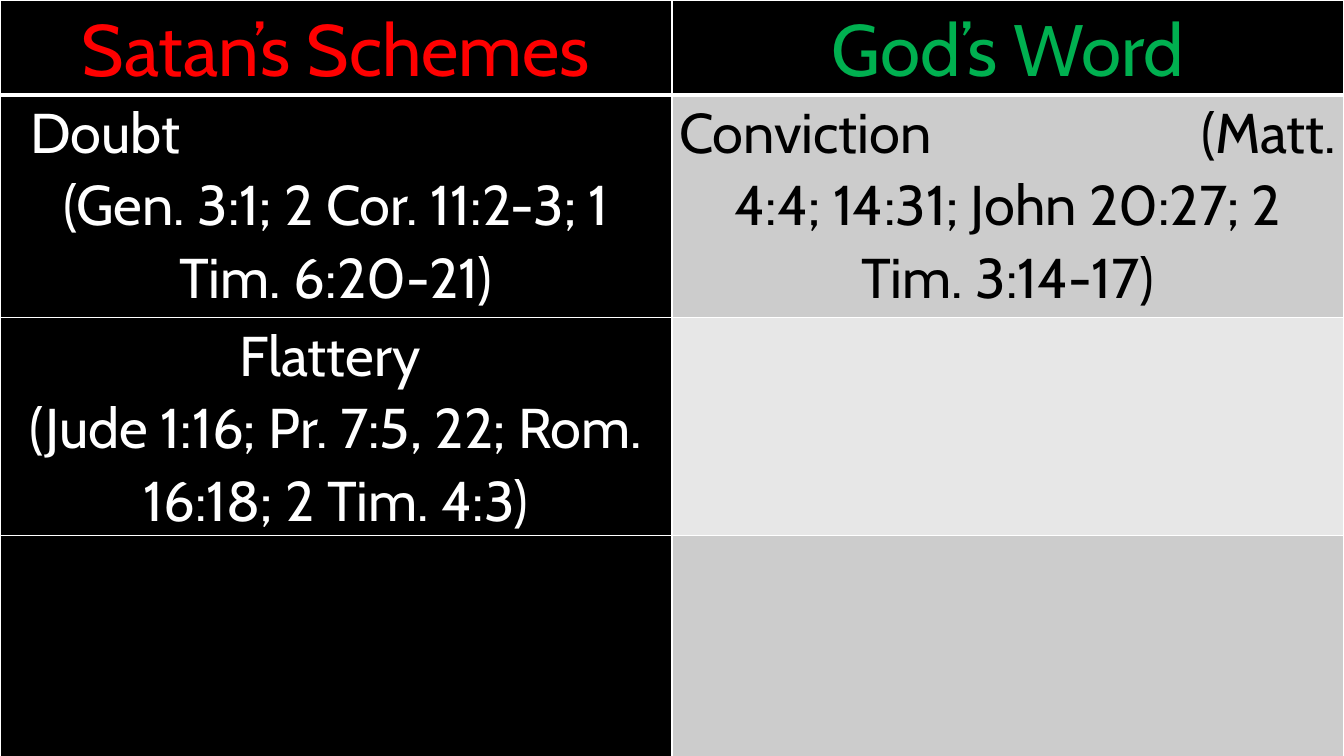
from lxml.etree import SubElement
from pptx import Presentation
from pptx.dml.color import RGBColor
from pptx.enum.text import PP_ALIGN
from pptx.oxml import parse_xml
from pptx.oxml.ns import nsdecls, qn
from pptx.util import Inches, Pt

BLACK, WHITE, RED, GREEN = "000000", "FFFFFF", "FF0000", "00B050"
DARK_GRAY, LIGHT_GRAY = "CCCCCC", "E7E7E7"
COLUMN_WIDTH = 13.33 / 2
ROW_HEIGHTS = [0.94, 2.21, 2.15, 2.2]
CELL_MARGIN = 0.07


def color(hex_value):
    return RGBColor.from_string(hex_value)


def set_borders(cell, top, bottom):
    properties = cell._tc.get_or_add_tcPr()
    sides = [("lnL", 1), ("lnR", 1), ("lnT", top), ("lnB", bottom)]
    for index, (side, points) in enumerate(sides):
        line = parse_xml(
            f'<a:{side} {nsdecls("a")} w="{Pt(points)}"><a:solidFill>'
            f'<a:srgbClr val="{WHITE}"/></a:solidFill></a:{side}>')
        properties.insert(index, line)


def style_cell(cell, fill, row):
    cell.fill.solid()
    cell.fill.fore_color.rgb = color(fill)
    cell.margin_left = cell.margin_right = Inches(CELL_MARGIN)
    cell.margin_top = cell.margin_bottom = 0
    set_borders(cell, 3 if row == 1 else 1, 3 if row == 0 else 1)


def write_cell(cell, lines, size, text_color):
    cell.text_frame.text = "\n".join(lines)
    for paragraph in cell.text_frame.paragraphs:
        paragraph.alignment = PP_ALIGN.CENTER
        paragraph.line_spacing = 1.07
        for run in paragraph.runs:
            run.font.name = "Cabin"
            run.font.size = Pt(size)
            run.font.bold = False
            run.font.color.rgb = color(text_color)


def align_left(paragraph, indent=0):
    paragraph.alignment = PP_ALIGN.LEFT
    paragraph._p.get_or_add_pPr().set("marL", str(Inches(indent)))


def add_right_tab(paragraph, position):
    tabs = SubElement(paragraph._p.get_or_add_pPr(), qn("a:tabLst"))
    SubElement(tabs, qn("a:tab"), pos=str(Inches(position)), algn="r")


def add_comparison_table(slide):
    table = slide.shapes.add_table(
        len(ROW_HEIGHTS), 2, 0, 0,
        Inches(2 * COLUMN_WIDTH), Inches(sum(ROW_HEIGHTS))).table
    for column in table.columns:
        column.width = Inches(COLUMN_WIDTH)
    right_fills = [BLACK, DARK_GRAY, LIGHT_GRAY, DARK_GRAY]
    for row, height in enumerate(ROW_HEIGHTS):
        table.rows[row].height = Inches(height)
        style_cell(table.cell(row, 0), BLACK, row)
        style_cell(table.cell(row, 1), right_fills[row], row)
    return table


def main():
    presentation = Presentation()
    presentation.slide_width = Inches(13.33)
    presentation.slide_height = Inches(7.5)
    slide = presentation.slides.add_slide(presentation.slide_layouts[6])
    slide.background.fill.solid()
    slide.background.fill.fore_color.rgb = color(BLACK)

    table = add_comparison_table(slide)
    write_cell(table.cell(0, 0), ["Satan’s Schemes"], 52, RED)
    write_cell(table.cell(0, 1), ["God’s Word"], 52, GREEN)
    doubt, conviction = table.cell(1, 0), table.cell(1, 1)
    write_cell(doubt, ["Doubt", "(Gen. 3:1; 2 Cor. 11:2-3; 1 Tim. 6:20-21)"], 40, WHITE)
    write_cell(conviction, ["Conviction\t(Matt.", "4:4; 14:31; John 20:27; 2 Tim. 3:14-17)"], 40, BLACK)
    write_cell(table.cell(2, 0), ["Flattery ", "(Jude 1:16; Pr. 7:5, 22; Rom. 16:18; 2 Tim. 4:3)"], 40, WHITE)

    align_left(doubt.text_frame.paragraphs[0], 0.23)
    conviction_heading = conviction.text_frame.paragraphs[0]
    align_left(conviction_heading)
    add_right_tab(conviction_heading, COLUMN_WIDTH - 2 * CELL_MARGIN - 0.01)

    presentation.save("out.pptx")


if __name__ == "__main__":
    main()
